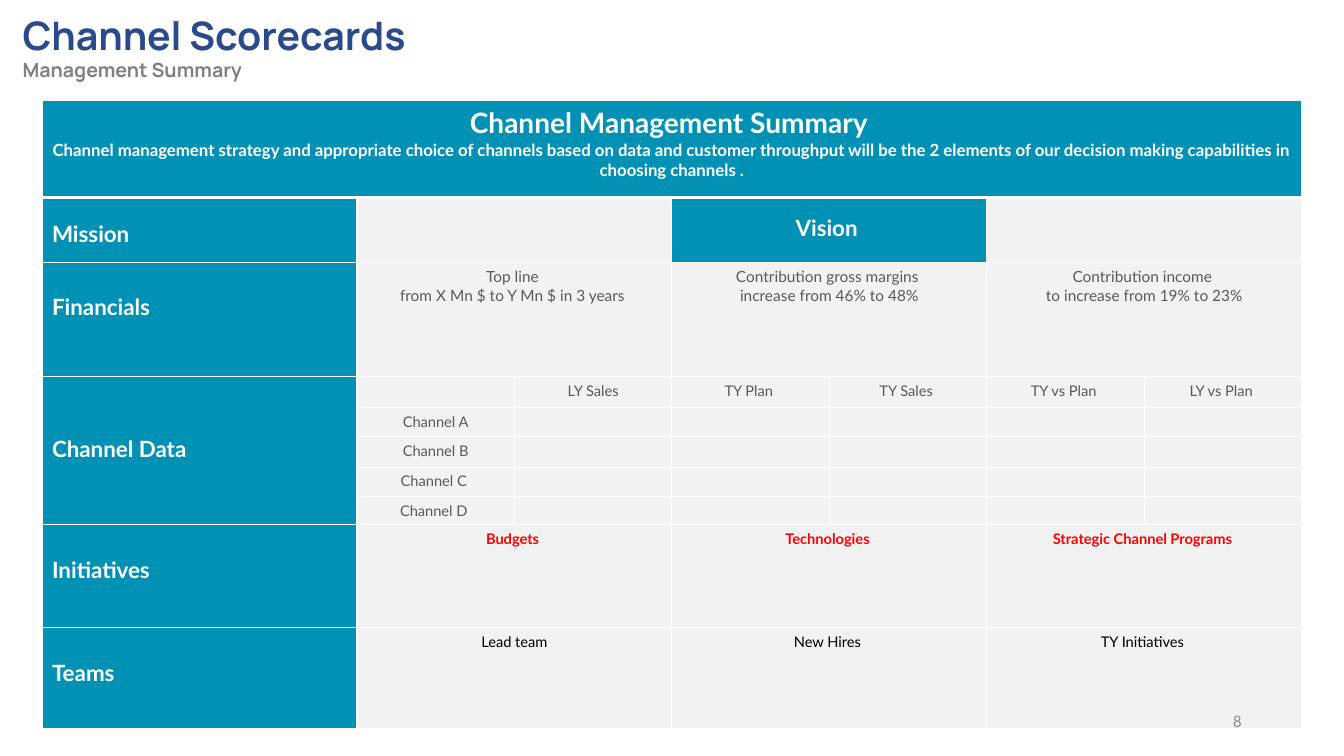
from lxml import etree
from pptx import Presentation
from pptx import util as u
from pptx.dml.color import RGBColor
from pptx.enum import text
from pptx.oxml.ns import qn

PX = 9525
COLORS = {
    "teal": "0091B5", "panel": "F2F2F2", "white": "FFFFFF", "body": "595959",
    "red": "FF0000", "black": "000000", "title": "2A4A8B", "subtitle": "808080",
    "page": "8C8C8C",
}
CENTER, LEFT, RIGHT = text.PP_ALIGN.CENTER, text.PP_ALIGN.LEFT, text.PP_ALIGN.RIGHT
FORMATS = {
    "banner": dict(size=20, bold=True, color="white", align=CENTER),
    "strategy": dict(size=12, bold=True, color="white", align=CENTER),
    "label": dict(size=16, bold=True, color="white", align=LEFT),
    "vision": dict(size=16, bold=True, color="white", align=CENTER),
    "target": dict(size=11, bold=False, color="body", align=CENTER),
    "data": dict(size=10.5, bold=False, color="body", align=CENTER),
    "initiative": dict(size=10.5, bold=True, color="red", align=CENTER),
    "team": dict(size=10.5, bold=False, color="black", align=CENTER),
    "title": dict(size=28, bold=True, color="title", align=LEFT, name="Manrope"),
    "subtitle": dict(size=14, bold=True, color="subtitle", align=LEFT, name="Manrope"),
    "page": dict(size=12, bold=False, color="page", align=RIGHT, name="Calibri"),
}


def write(frame, lines):
    frame.word_wrap = True
    for i, (words, kind) in enumerate(lines):
        paragraph = frame.add_paragraph() if i else frame.paragraphs[0]
        style = {"name": "Lato", **FORMATS[kind]}
        paragraph.alignment = style["align"]
        run = paragraph.add_run()
        run.text = words
        run.font.color.rgb = RGBColor.from_string(COLORS[style["color"]])
        for key, value in dict(name=style["name"], bold=style["bold"], size=u.Pt(style["size"])).items():
            setattr(run.font, key, value)


def add_borders(cell, bottom):
    properties = cell._tc.get_or_add_tcPr()
    for i, (side, points) in enumerate((("lnL", 1), ("lnR", 1), ("lnT", 1), ("lnB", bottom))):
        line = etree.Element(qn("a:" + side), w=str(u.Pt(points)))
        fill = etree.SubElement(line, qn("a:solidFill"))
        etree.SubElement(fill, qn("a:srgbClr"), val=COLORS["white"])
        properties.insert(i, line)


prs = Presentation()
prs.slide_width, prs.slide_height = 1280 * PX, 720 * PX
slide = prs.slides.add_slide(prs.slide_layouts[6])

column_widths = [300] + [150] * 6
row_heights = [92, 62, 109, 29, 28, 29, 28, 27, 98, 96]
scorecard = slide.shapes.add_table(
    len(row_heights), len(column_widths), 40 * PX, 96 * PX,
    sum(column_widths) * PX, sum(row_heights) * PX).table
for column, width in zip(scorecard.columns, column_widths):
    column.width = width * PX
for row, height in zip(scorecard.rows, row_heights):
    row.height = height * PX

scorecard.cell(0, 0).merge(scorecard.cell(0, 6))
scorecard.cell(3, 0).merge(scorecard.cell(7, 0))
for r in (1, 2, 8, 9):
    for c in (1, 3, 5):
        scorecard.cell(r, c).merge(scorecard.cell(r, c + 1))

contents = {
    (0, 0): [
        ("Channel Management Summary ", "banner"),
        ("Channel management strategy and appropriate choice of channels based on data and customer "
         "throughput will be the 2 elements of our decision making capabilities in choosing channels .",
         "strategy")],
    (1, 3): [("Vision ", "vision")],
    (2, 1): [("Top line ", "target"), ("from X Mn $ to Y Mn $ in 3 years ", "target")],
    (2, 3): [("Contribution gross margins ", "target"), ("increase from 46% to 48%", "target")],
    (2, 5): [("Contribution income ", "target"), ("to increase from 19% to 23%", "target")],
}
labels = [(1, "Mission", 22), (2, "Financials", 30), (3, "Channel Data", 56),
          (8, "Initiatives", 30), (9, "Teams", 30)]
top_margins = {(1, 3): 16}
for r, label, margin in labels:
    contents[r, 0] = [(label, "label")]
    top_margins[r, 0] = margin
for c, heading in enumerate(["LY Sales", "TY Plan ", "TY Sales ", "TY vs Plan ", "LY vs Plan "], 2):
    contents[3, c] = [(heading, "data")]
for r, channel in enumerate(["Channel A", "Channel B", "Channel C ", "Channel D "], 4):
    contents[r, 1] = [(channel, "data")]
for r, kind, headings in (
        (8, "initiative", ["Budgets ", "Technologies ", "Strategic Channel Programs "]),
        (9, "team", ["Lead team", "New Hires ", "TY Initiatives "])):
    for i, heading in enumerate(headings):
        contents[r, 1 + 2 * i] = [(heading, kind)]

for r in range(len(row_heights)):
    for c in range(len(column_widths)):
        cell = scorecard.cell(r, c)
        is_teal = r == 0 or c == 0 or (r == 1 and c in (3, 4))
        cell.fill.solid()
        cell.fill.fore_color.rgb = RGBColor.from_string(COLORS["teal" if is_teal else "panel"])
        add_borders(cell, 3 if r == 0 else 1)
        if (r, c) in contents:
            write(cell.text_frame, contents[r, c])
            cell.margin_top = top_margins.get((r, c), 5) * PX
        else:
            etree.SubElement(cell.text_frame.paragraphs[0]._p, qn("a:endParaRPr"), sz="1050")

heading_box = slide.shapes.add_textbox(12 * PX, 6 * PX, 740 * PX, 78 * PX)
write(heading_box.text_frame, [("Channel Scorecards", "title"), ("Management Summary", "subtitle")])

page_box = slide.shapes.add_textbox(904 * PX, 667 * PX, 288 * PX, 38 * PX)
page_box.text_frame.vertical_anchor = text.MSO_ANCHOR.MIDDLE
write(page_box.text_frame, [("8", "page")])

prs.save("out.pptx")
